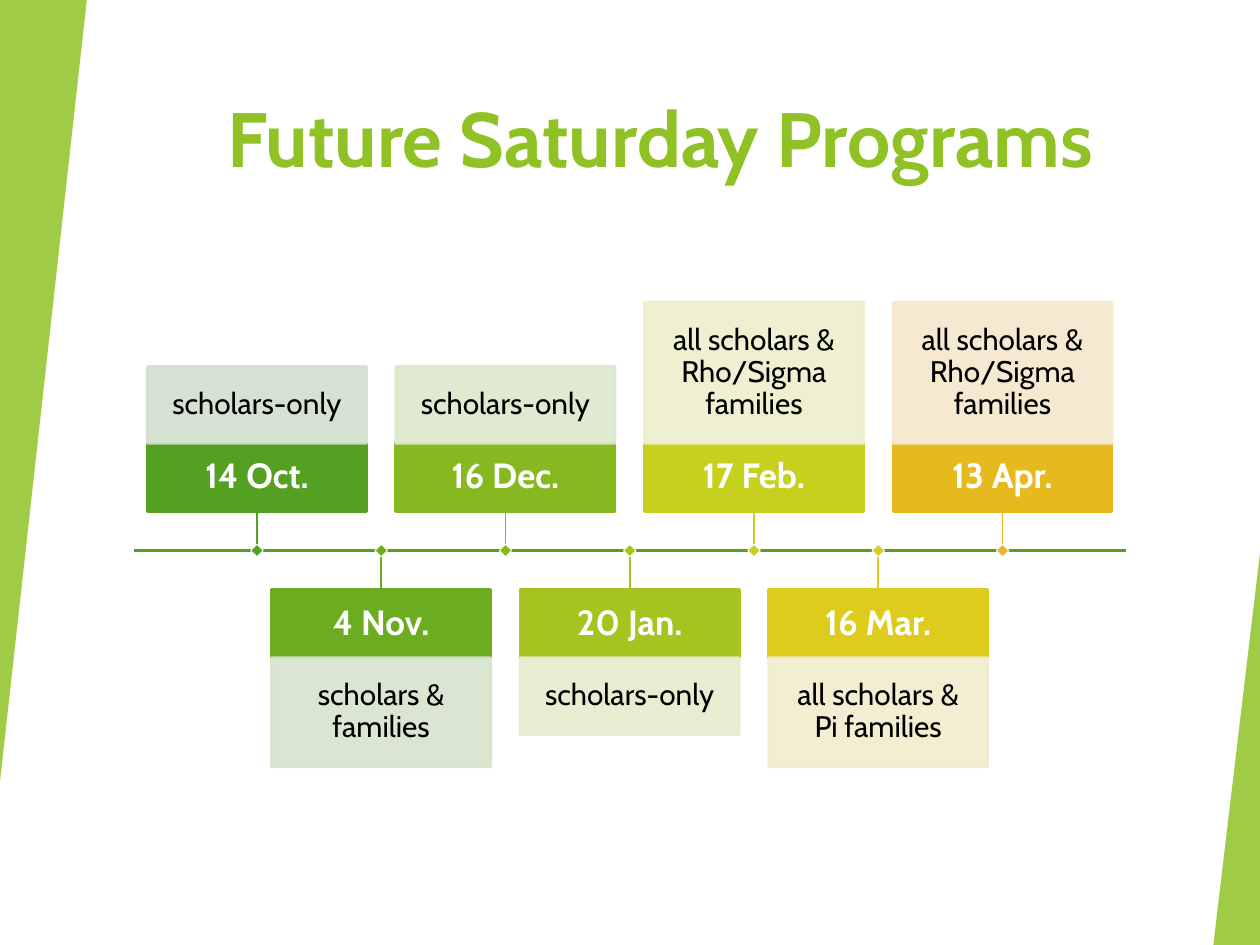
from lxml import etree
from pptx import Presentation
from pptx import util as u
from pptx.dml.color import RGBColor
from pptx.enum import shapes, text
from pptx.oxml.ns import qn

GREEN, DARK_GREEN, WHITE, BLACK = "90C226", "54A021", "FFFFFF", "000000"

# Date, programme, lines of text, strong colour, pale colour
EVENTS = [
    ("14 Oct.", "scholars-only", 1, DARK_GREEN, "D1DFCD"),
    ("4 Nov.", "scholars & families", 2, "6BAC20", "D6E4CC"),
    ("16 Dec.", "scholars-only", 1, "86B820", "DCE8CC"),
    ("20 Jan.", "scholars-only", 1, "A5C41F", "E5ECCB"),
    ("17 Feb.", "all scholars & Rho/Sigma families", 3, "C7D01D", "EEEFCC"),
    ("16 Mar.", "all scholars & Pi families", 2, "DDCC1C", "F2ECCC"),
    ("13 Apr.", "all scholars & Rho/Sigma families", 3, "E6B91E", "F5E7CD"),
]

# Timeline measures in centimetres
AXIS_Y, AXIS_LEFT, AXIS_RIGHT = 11.1, 2.7, 22.7
FIRST_X, STEP = 5.18, 2.505
BOX_WIDTH, DATE_HEIGHT, STEM = 4.42, 1.37, 0.79
MARKER = 0.18


def color(value):
    return RGBColor.from_string(value)


class Slide:
    """Holds the text style and the page being built."""

    font = "Cabin"

    def __init__(self, deck):
        self.page = deck.slides.add_slide(deck.slide_layouts[5])

    def set_text(self, frame, words, size, ink, bold=False):
        frame.text = words
        frame.word_wrap = True
        para = frame.paragraphs[0]
        para.alignment = text.PP_ALIGN.CENTER
        for span in para.runs:
            span.font.name = self.font
            span.font.size = u.Pt(size)
            span.font.bold = bold
            span.font.color.rgb = color(ink)
        return para

    def title(self, words, left, top, width, height):
        box = self.page.shapes.title
        box.left, box.top = u.Cm(left), u.Cm(top)
        box.width, box.height = u.Cm(width), u.Cm(height)
        box.text_frame.vertical_anchor = text.MSO_ANCHOR.TOP
        self.set_text(box.text_frame, words, 44, GREEN, bold=True)

    def shape(self, kind, left, top, width, height, fill, line=None, weight=1.5, alpha=100):
        shape = self.page.shapes.add_shape(
            kind, u.Cm(left), u.Cm(top), u.Cm(width), u.Cm(height))
        shape.shadow.inherit = False
        shape.fill.solid()
        shape.fill.fore_color.rgb = color(fill)
        if line:
            shape.line.color.rgb = color(line)
            shape.line.width = u.Pt(weight)
        else:
            shape.line.fill.background()
        if alpha < 100:
            for tint in shape.element.spPr.iter(qn("a:srgbClr")):
                etree.SubElement(tint, qn("a:alpha"), val=str(alpha * 1000))
        return shape

    def wedge(self, left, top, width, height, rotation=0):
        wedge = self.shape(shapes.MSO_SHAPE.ISOSCELES_TRIANGLE,
                           left, top, width, height, GREEN, alpha=85)
        wedge.adjustments[0] = 1
        wedge.rotation = rotation

    def box(self, words, left, top, height, fill, size, ink, inset, bold=False, alpha=100):
        box = self.shape(shapes.MSO_SHAPE.RECTANGLE, left, top, BOX_WIDTH, height,
                         fill, fill, alpha=alpha)
        frame = box.text_frame
        frame.margin_left = frame.margin_right = u.Cm(inset)
        frame.margin_top = frame.margin_bottom = u.Cm(inset)
        frame.vertical_anchor = text.MSO_ANCHOR.MIDDLE
        self.set_text(frame, words, size, ink, bold).line_spacing = 0.9

    def line(self, x1, y1, x2, y2, ink, weight):
        line = self.page.shapes.add_connector(
            shapes.MSO_CONNECTOR.STRAIGHT, u.Cm(x1), u.Cm(y1), u.Cm(x2), u.Cm(y2))
        line.line.color.rgb = color(ink)
        line.line.width = u.Pt(weight)
        etree.SubElement(line.element.spPr, qn("a:effectLst"))

    def marker(self, x, y, fill):
        marker = self.shape(shapes.MSO_SHAPE.RECTANGLE, x - MARKER / 2, y - MARKER / 2,
                            MARKER, MARKER, fill, WHITE, weight=0.5)
        marker.rotation = 45

    def event(self, x, above, date, programme, lines, strong, pale):
        left = x - BOX_WIDTH / 2
        label_height = 0.9 + 0.65 * lines
        if above:
            stem_end = AXIS_Y - STEM
            date_top = stem_end - DATE_HEIGHT
            label_top = date_top - label_height
        else:
            stem_end = date_top = AXIS_Y + STEM
            label_top = date_top + DATE_HEIGHT
        self.box(date, left, date_top, DATE_HEIGHT, strong, 20, WHITE, 0.28, bold=True)
        self.box(programme, left, label_top, label_height, pale, 17, BLACK, 0.45, alpha=90)
        self.line(x, stem_end, x, AXIS_Y, strong, 1)
        self.marker(x, AXIS_Y, strong)


def main():
    deck = Presentation()
    deck.slide_width, deck.slide_height = u.Cm(25.4), u.Cm(19.05)
    slide = Slide(deck)

    # Title and side wedges
    slide.title("Future Saturday Programs", 2.7, 1.7, 21.23, 3.05)
    slide.wedge(0, 0, 1.75, 15.75, rotation=180)
    slide.wedge(24.46, 11.15, 0.94, 7.9)

    # Timeline, with events alternating above and below the axis
    slide.line(AXIS_LEFT, AXIS_Y, AXIS_RIGHT, AXIS_Y, DARK_GREEN, 1.5)
    for index, event in enumerate(EVENTS):
        slide.event(FIRST_X + index * STEP, index % 2 == 0, *event)

    deck.save("out.pptx")


if __name__ == "__main__":
    main()
